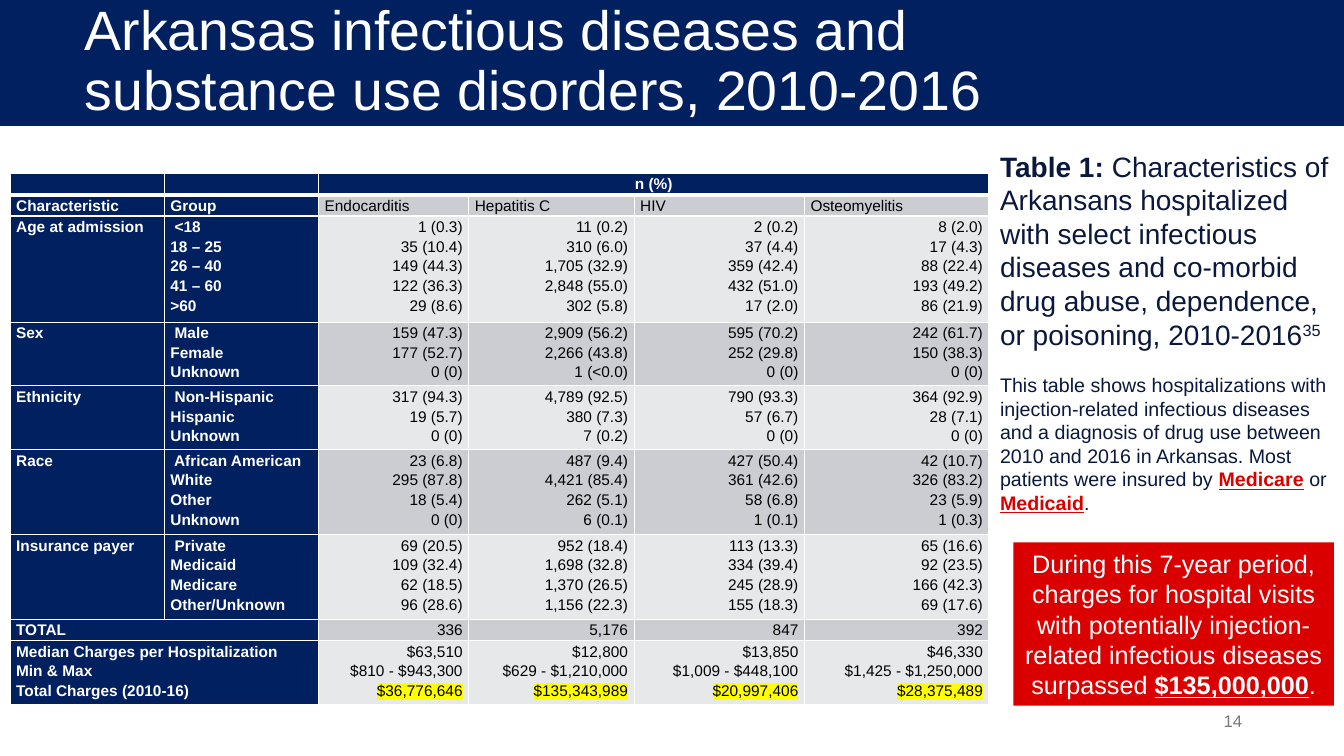
from dataclasses import dataclass

from lxml import etree
from pptx import Presentation
from pptx import util as u
from pptx.dml.color import RGBColor
from pptx.enum import shapes, text
from pptx.oxml import ns

NAVY = RGBColor(0x00, 0x20, 0x60)
INK = RGBColor(0x09, 0x18, 0x3C)
RED = RGBColor(0xDB, 0x00, 0x00)
WHITE = RGBColor(0xFF, 0xFF, 0xFF)
BLACK = RGBColor(0x00, 0x00, 0x00)
GRAY = RGBColor(0x79, 0x79, 0x79)
DARK_BAND = RGBColor(0xCC, 0xCD, 0xD2)
LIGHT_BAND = RGBColor(0xE7, 0xE8, 0xEA)
YELLOW = RGBColor(0xFF, 0xFF, 0x00)
FONT = "Arial"
LEFT, CENTER, RIGHT = text.PP_ALIGN.LEFT, text.PP_ALIGN.CENTER, text.PP_ALIGN.RIGHT
COLUMN_WIDTHS = (1.53, 1.53, 1.49, 1.64, 1.69, 1.83)
LINE_HEIGHT = 0.19


@dataclass(frozen=True)
class Section:
    characteristic: str
    lines: tuple[tuple[str, ...], ...]


@dataclass(frozen=True)
class Phrase:
    wording: str
    size: float
    color: RGBColor
    bold: bool = False
    underline: bool = False
    superscript: bool = False


SECTIONS = (
    Section("Characteristic", (
        ("Group", "Endocarditis", "Hepatitis C", "HIV", "Osteomyelitis"),
    )),
    Section("Age at admission", (
        (" <18", "1 (0.3)", "11 (0.2)", "2 (0.2)", "8 (2.0)"),
        ("18 – 25", "35 (10.4)", "310 (6.0)", "37 (4.4)", "17 (4.3)"),
        ("26 – 40", "149 (44.3)", "1,705 (32.9)", "359 (42.4)", "88 (22.4)"),
        ("41 – 60", "122 (36.3)", "2,848 (55.0)", "432 (51.0)", "193 (49.2)"),
        (">60", "29 (8.6)", "302 (5.8)", "17 (2.0)", "86 (21.9)"),
    )),
    Section("Sex", (
        (" Male", "159 (47.3)", "2,909 (56.2)", "595 (70.2)", "242 (61.7)"),
        ("Female", "177 (52.7)", "2,266 (43.8)", "252 (29.8)", "150 (38.3)"),
        ("Unknown", "0 (0)", "1 (<0.0)", "0 (0)", "0 (0)"),
    )),
    Section("Ethnicity", (
        (" Non-Hispanic", "317 (94.3)", "4,789 (92.5)", "790 (93.3)", "364 (92.9)"),
        ("Hispanic", "19 (5.7)", "380 (7.3)", "57 (6.7)", "28 (7.1)"),
        ("Unknown", "0 (0)", "7 (0.2)", "0 (0)", "0 (0)"),
    )),
    Section("Race", (
        (" African American", "23 (6.8)", "487 (9.4)", "427 (50.4)", "42 (10.7)"),
        ("White", "295 (87.8)", "4,421 (85.4)", "361 (42.6)", "326 (83.2)"),
        ("Other", "18 (5.4)", "262 (5.1)", "58 (6.8)", "23 (5.9)"),
        ("Unknown", "0 (0)", "6 (0.1)", "1 (0.1)", "1 (0.3)"),
    )),
    Section("Insurance payer", (
        (" Private", "69 (20.5)", "952 (18.4)", "113 (13.3)", "65 (16.6)"),
        ("Medicaid", "109 (32.4)", "1,698 (32.8)", "334 (39.4)", "92 (23.5)"),
        ("Medicare", "62 (18.5)", "1,370 (26.5)", "245 (28.9)", "166 (42.3)"),
        ("Other/Unknown", "96 (28.6)", "1,156 (22.3)", "155 (18.3)", "69 (17.6)"),
    )),
    Section("", (("TOTAL", "336", "5,176", "847", "392"),)),
    Section("", (
        ("Median Charges per Hospitalization", "$63,510", "$12,800", "$13,850", "$46,330"),
        ("Min & Max", "$810 - $943,300", "$629 - $1,210,000", "$1,009 - $448,100",
         "$1,425 - $1,250,000"),
        ("Total Charges (2010-16)", "$36,776,646", "$135,343,989", "$20,997,406",
         "$28,375,489"),
    )),
)
CAPTION = (
    Phrase("Table 1:", 20, INK, bold=True),
    Phrase(" Characteristics of Arkansans hospitalized with select infectious diseases "
           "and co-morbid drug abuse, dependence, or poisoning, 2010-2016", 20, INK),
    Phrase("35", 20, INK, superscript=True),
)
EXPLANATION = (
    Phrase("This table shows hospitalizations with injection-related infectious diseases "
           "and a diagnosis of drug use between 2010 and 2016 in Arkansas. Most patients "
           "were insured by ", 14, INK),
    Phrase("Medicare", 14, RED, bold=True, underline=True),
    Phrase(" or ", 14, INK),
    Phrase("Medicaid", 14, RED, bold=True, underline=True),
    Phrase(".", 14, INK),
)
CHARGES = (
    Phrase("During this 7-year period, charges for hospital visits with potentially "
           "injection-related infectious diseases surpassed ", 18, WHITE),
    Phrase("$135,000,000", 18, WHITE, bold=True, underline=True),
    Phrase(".", 18, WHITE),
)


def box(left: float, top: float, width: float, height: float) -> tuple:
    return tuple(u.Inches(length) for length in (left, top, width, height))


def style_run(run, size: float, color: RGBColor, bold: bool = False) -> None:
    run.font.name = FONT
    run.font.size = u.Pt(size)
    run.font.bold = bold
    run.font.color.rgb = color


def write_phrases(paragraph, phrases: tuple[Phrase, ...]) -> None:
    for phrase in phrases:
        run = paragraph.add_run()
        run.text = phrase.wording
        style_run(run, phrase.size, phrase.color, phrase.bold)
        run.font.underline = phrase.underline
        if phrase.superscript:
            run.font._element.set("baseline", "30000")


def highlight(run) -> None:
    marker = etree.Element(ns.qn("a:highlight"))
    etree.SubElement(marker, ns.qn("a:srgbClr"), val=str(YELLOW))
    run.font._element.find(ns.qn("a:latin")).addprevious(marker)


def add_borders(cell, bottom: float) -> None:
    properties = cell._tc.get_or_add_tcPr()
    for position, (side, points) in enumerate(
            (("lnL", 1), ("lnR", 1), ("lnT", 1), ("lnB", bottom))):
        line = etree.Element(ns.qn(f"a:{side}"), w=str(u.Pt(points)))
        fill = etree.SubElement(line, ns.qn("a:solidFill"))
        etree.SubElement(fill, ns.qn("a:srgbClr"), val=str(WHITE))
        properties.insert(position, line)


def fill_cell(cell, wording: str, shade: RGBColor, color: RGBColor, align,
              bottom: float = 1) -> None:
    cell.margin_left = cell.margin_right = u.Inches(0.06)
    cell.margin_top = cell.margin_bottom = 0
    cell.fill.solid()
    cell.fill.fore_color.rgb = shade
    add_borders(cell, bottom)
    cell.text_frame.text = wording
    for paragraph in cell.text_frame.paragraphs:
        paragraph.alignment = align
        paragraph.line_spacing = 1.15
        for run in paragraph.runs:
            style_run(run, 11, color, bold=color == WHITE)
        if not paragraph.runs:
            etree.SubElement(paragraph._p, ns.qn("a:endParaRPr"), sz="1100")


def add_characteristics(slide) -> None:
    table = slide.shapes.add_table(len(SECTIONS) + 1, len(COLUMN_WIDTHS),
                                   *box(0.1, 1.72, sum(COLUMN_WIDTHS), 4.9)).table
    table.first_row = table.horz_banding = False
    for column, width in zip(table.columns, COLUMN_WIDTHS):
        column.width = u.Inches(width)
    table.rows[0].height = u.Inches(LINE_HEIGHT)
    for index in range(len(COLUMN_WIDTHS)):
        fill_cell(table.cell(0, index), "n (%)" if index == 2 else "", NAVY, WHITE, CENTER, 3)
    table.cell(0, 2).merge(table.cell(0, 5))

    for row, section in enumerate(SECTIONS, start=1):
        table.rows[row].height = u.Inches(LINE_HEIGHT * len(section.lines))
        groups, *counts = ("\n".join(column) for column in zip(*section.lines))
        labels = (section.characteristic, groups) if section.characteristic else (groups, "")
        for index, label in enumerate(labels):
            fill_cell(table.cell(row, index), label, NAVY, WHITE, LEFT)
        if not section.characteristic:
            table.cell(row, 0).merge(table.cell(row, 1))
        shade = DARK_BAND if row % 2 else LIGHT_BAND
        for index, count in enumerate(counts, start=2):
            fill_cell(table.cell(row, index), count, shade, BLACK, LEFT if row == 1 else RIGHT)
            if section is SECTIONS[-1]:
                highlight(table.cell(row, index).text_frame.paragraphs[-1].runs[0])


def add_panel(slide, place: tuple, color: RGBColor):
    panel = slide.shapes.add_shape(shapes.MSO_SHAPE.RECTANGLE, *place)
    panel.shadow.inherit = False
    panel.fill.solid()
    panel.fill.fore_color.rgb = color
    panel.line.fill.background()
    return panel


def add_title(slide) -> None:
    title = slide.shapes.title
    title.left, title.top, title.width, title.height = box(0.74, 0, 9.44, 1.24)
    frame = title.text_frame
    frame.text = "Arkansas infectious diseases and substance use disorders, 2010-2016"
    frame.auto_size = text.MSO_AUTO_SIZE.NONE
    frame.vertical_anchor = text.MSO_ANCHOR.MIDDLE
    heading = frame.paragraphs[0]
    heading.alignment = LEFT
    heading.line_spacing = 0.9
    style_run(heading.runs[0], 39.6, WHITE)


def main() -> None:
    deck = Presentation()
    deck.slide_width, deck.slide_height = u.Inches(13.33), u.Inches(7.5)
    slide = deck.slides.add_slide(deck.slide_layouts[5])
    banner = add_panel(slide, box(0, 0, 13.33, 1.25), NAVY)
    slide.shapes.title._element.addprevious(banner._element)
    add_title(slide)

    commentary = slide.shapes.add_textbox(*box(9.82, 1.43, 3.51, 3.77)).text_frame
    commentary.word_wrap = True
    write_phrases(commentary.paragraphs[0], CAPTION)
    explanation = commentary.add_paragraph()
    explanation.space_before = u.Pt(16)
    write_phrases(explanation, EXPLANATION)

    add_characteristics(slide)

    callout = add_panel(slide, box(10.05, 5.38, 3.18, 1.62), RED).text_frame
    callout.word_wrap = True
    callout.paragraphs[0].alignment = CENTER
    write_phrases(callout.paragraphs[0], CHARGES)

    page = slide.shapes.add_textbox(*box(9.42, 6.95, 3, 0.4)).text_frame
    page.word_wrap = True
    page.vertical_anchor = text.MSO_ANCHOR.MIDDLE
    page.text = "14"
    page.paragraphs[0].alignment = RIGHT
    style_run(page.paragraphs[0].runs[0], 12, GRAY)
    deck.save("out.pptx")


if __name__ == "__main__":
    main()
